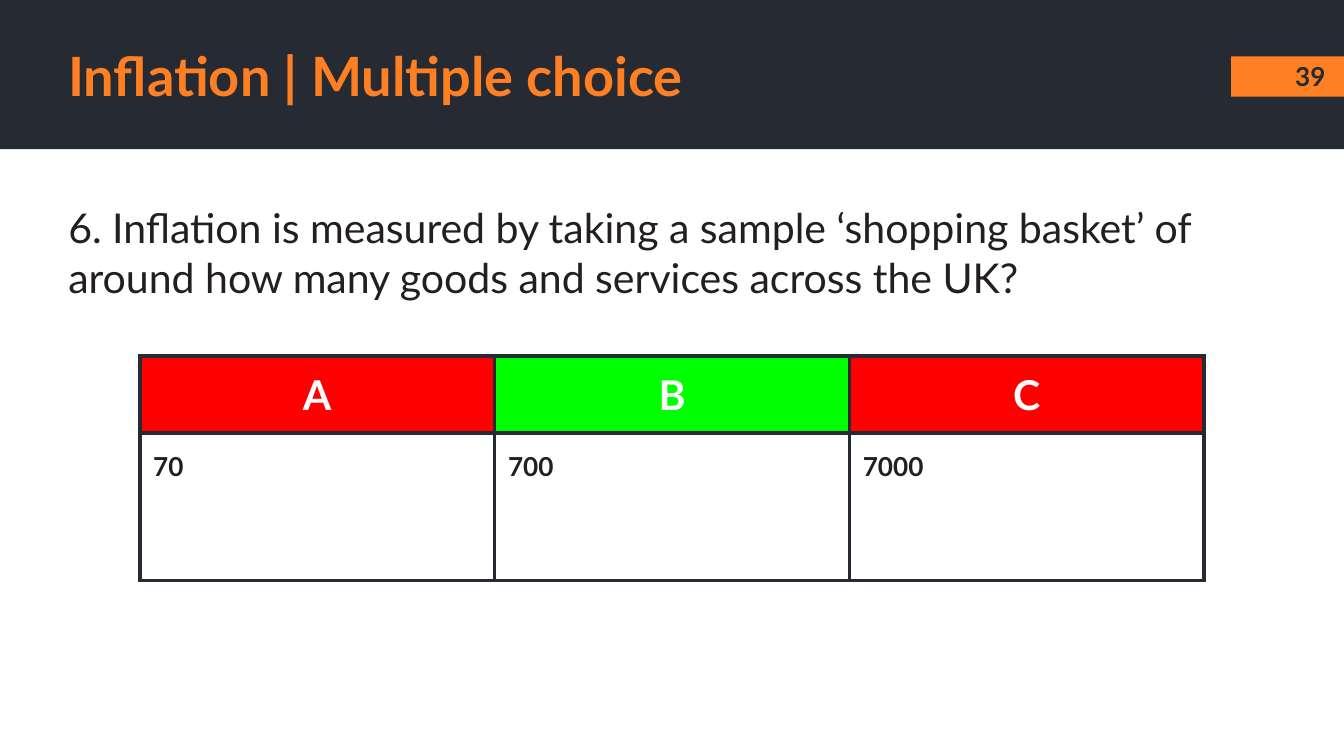
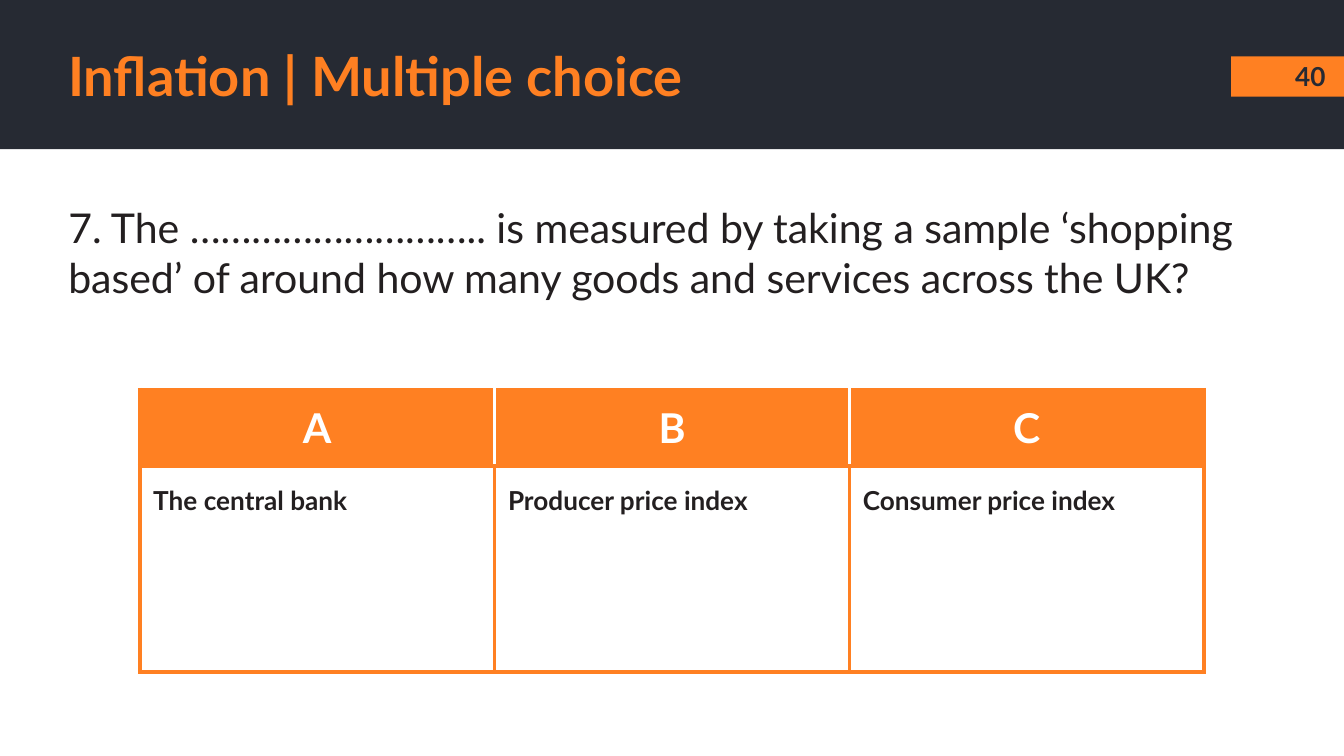
from dataclasses import dataclass

import pptx
import pptx.dml.color
import pptx.enum.shapes
import pptx.enum.text
import pptx.oxml.ns
import pptx.util
from lxml import etree

# Shared look
FONT = "Lato"
DARK, ORANGE, INK, WHITE = "262A33", "FF8022", "231F20", "FFFFFF"
RED, GREEN = "FF0000", "00FF00"
TITLE = "Inflation | Multiple choice"
LEFT, CENTER = pptx.enum.text.PP_ALIGN.LEFT, pptx.enum.text.PP_ALIGN.CENTER
TOP, MIDDLE = pptx.enum.text.MSO_ANCHOR.TOP, pptx.enum.text.MSO_ANCHOR.MIDDLE
BORDER_WIDTH = pptx.util.Pt(2.25)

# Grid of 0.1 inch squares
SLIDE_WIDTH, SLIDE_HEIGHT = pptx.util.Inches(10), pptx.util.Inches(5.625)
COLUMNS, ROWS = 100, 56.25


@dataclass(frozen=True)
class Area:
    column: float
    row: float
    columns: float
    rows: float

    def lengths(self) -> tuple[int, int, int, int]:
        return across(self.column), down(self.row), across(self.columns), down(self.rows)


@dataclass(frozen=True)
class TextStyle:
    size: float
    color: str
    bold: bool = True
    align: int = LEFT
    anchor: int = TOP
    line_spacing: float = 1.0


@dataclass(frozen=True)
class Question:
    number: int
    text: str
    text_rows: float
    answers: tuple[str, ...]
    header_fills: tuple[str, ...]
    border: str
    header_divider: str
    table_row: float
    answer_rows: float


BAND = Area(0, 0, COLUMNS, 11.1)
NUMBER_TAB = Area(91.6, 4.2, 8.4, 3)
NUMBER_AREA = Area(94.9, 4.4, 5.2, 2.5)
TITLE_AREA = Area(4.1, 2.8, 87.4, 5.6)
TABLE_COLUMN, ANSWER_COLUMNS, HEADER_ROWS = 10.4, 26.4, 5.7

TITLE_STYLE = TextStyle(29, ORANGE, anchor=MIDDLE)
NUMBER_STYLE = TextStyle(14, DARK, align=CENTER, anchor=MIDDLE)
QUESTION_STYLE = TextStyle(22, INK, bold=False)
HEADER_STYLE = TextStyle(22, WHITE, align=CENTER)
ANSWER_STYLE = TextStyle(14, INK, line_spacing=1.15)

QUESTIONS = (
    Question(
        39,
        "6. Inflation is measured by taking a sample ‘shopping basket’ of "
        "around how many goods and services across the UK?",
        20.5, ("70", "700", "7000"), (RED, GREEN, RED), DARK, DARK, 26.5, 11,
    ),
    Question(
        40,
        "7. The ……………………….. is measured by taking a sample ‘shopping "
        "based’ of around how many goods and services across the UK?",
        16.8, ("The central bank", "Producer price index", "Consumer price index"),
        (ORANGE,) * 3, ORANGE, WHITE, 29, 15.3,
    ),
)


def across(columns: float) -> int:
    return round(SLIDE_WIDTH * columns / COLUMNS)


def down(rows: float) -> int:
    return round(SLIDE_HEIGHT * rows / ROWS)


def paint(fill, color: str) -> None:
    fill.solid()
    fill.fore_color.rgb = pptx.dml.color.RGBColor.from_string(color)


def write(text_frame, text: str, style: TextStyle) -> None:
    text_frame.text = text
    paragraph = text_frame.paragraphs[0]
    paragraph.alignment = style.align
    paragraph.line_spacing = style.line_spacing
    font = paragraph.runs[0].font
    font.name, font.size, font.bold = FONT, pptx.util.Pt(style.size), style.bold
    paint(font.fill, style.color)


def set_margins(box) -> None:
    box.margin_left = box.margin_right = across(1)
    box.margin_top = box.margin_bottom = down(1)


def add_block(slide, area: Area, color: str) -> None:
    shape = slide.shapes.add_shape(
        pptx.enum.shapes.MSO_SHAPE.RECTANGLE, *area.lengths())
    shape.shadow.inherit = False
    paint(shape.fill, color)
    shape.line.fill.background()


def add_text(slide, area: Area, text: str, style: TextStyle) -> None:
    text_frame = slide.shapes.add_textbox(*area.lengths()).text_frame
    text_frame.word_wrap = True
    text_frame.vertical_anchor = style.anchor
    set_margins(text_frame)
    write(text_frame, text, style)


def set_borders(cell, left: str, right: str, top: str, bottom: str) -> None:
    properties = cell._tc.get_or_add_tcPr()
    qn = pptx.oxml.ns.qn
    for side, color in zip("LRTB", (left, right, top, bottom)):
        line = etree.SubElement(properties, qn(f"a:ln{side}"), w=str(BORDER_WIDTH))
        solid = etree.SubElement(line, qn("a:solidFill"))
        etree.SubElement(solid, qn("a:srgbClr"), val=color)


def add_answers(slide, question: Question) -> None:
    count = len(question.answers)
    heights = (HEADER_ROWS, question.answer_rows)
    area = Area(TABLE_COLUMN, question.table_row, ANSWER_COLUMNS * count, sum(heights))
    table = slide.shapes.add_table(2, count, *area.lengths()).table
    table.first_row = table.horz_banding = False
    for column in table.columns:
        column.width = across(ANSWER_COLUMNS)
    contents = (
        ("ABC", question.header_fills, HEADER_STYLE, question.header_divider),
        (question.answers, (WHITE,) * count, ANSWER_STYLE, question.border),
    )
    for row, (texts, fills, style, divider) in enumerate(contents):
        table.rows[row].height = down(heights[row])
        for column, (text, fill) in enumerate(zip(texts, fills)):
            cell = table.cell(row, column)
            set_margins(cell)
            set_borders(
                cell,
                left=divider if column > 0 else question.border,
                right=divider if column < count - 1 else question.border,
                top=question.border,
                bottom=question.border,
            )
            paint(cell.fill, fill)
            write(cell.text_frame, text, style)


def add_question_slide(presentation, question: Question) -> None:
    slide = presentation.slides.add_slide(presentation.slide_layouts[6])
    paint(slide.background.fill, WHITE)
    # Header band and number tab
    add_block(slide, BAND, DARK)
    add_block(slide, NUMBER_TAB, ORANGE)
    # Question, title and number
    question_area = Area(TITLE_AREA.column, 14.1, 90.7, question.text_rows)
    add_text(slide, question_area, question.text, QUESTION_STYLE)
    add_text(slide, TITLE_AREA, TITLE, TITLE_STYLE)
    add_text(slide, NUMBER_AREA, str(question.number), NUMBER_STYLE)
    # Answer table
    add_answers(slide, question)


def main() -> None:
    presentation = pptx.Presentation()
    presentation.slide_width = SLIDE_WIDTH
    presentation.slide_height = SLIDE_HEIGHT
    for question in QUESTIONS:
        add_question_slide(presentation, question)
    presentation.save("out.pptx")


if __name__ == "__main__":
    main()
